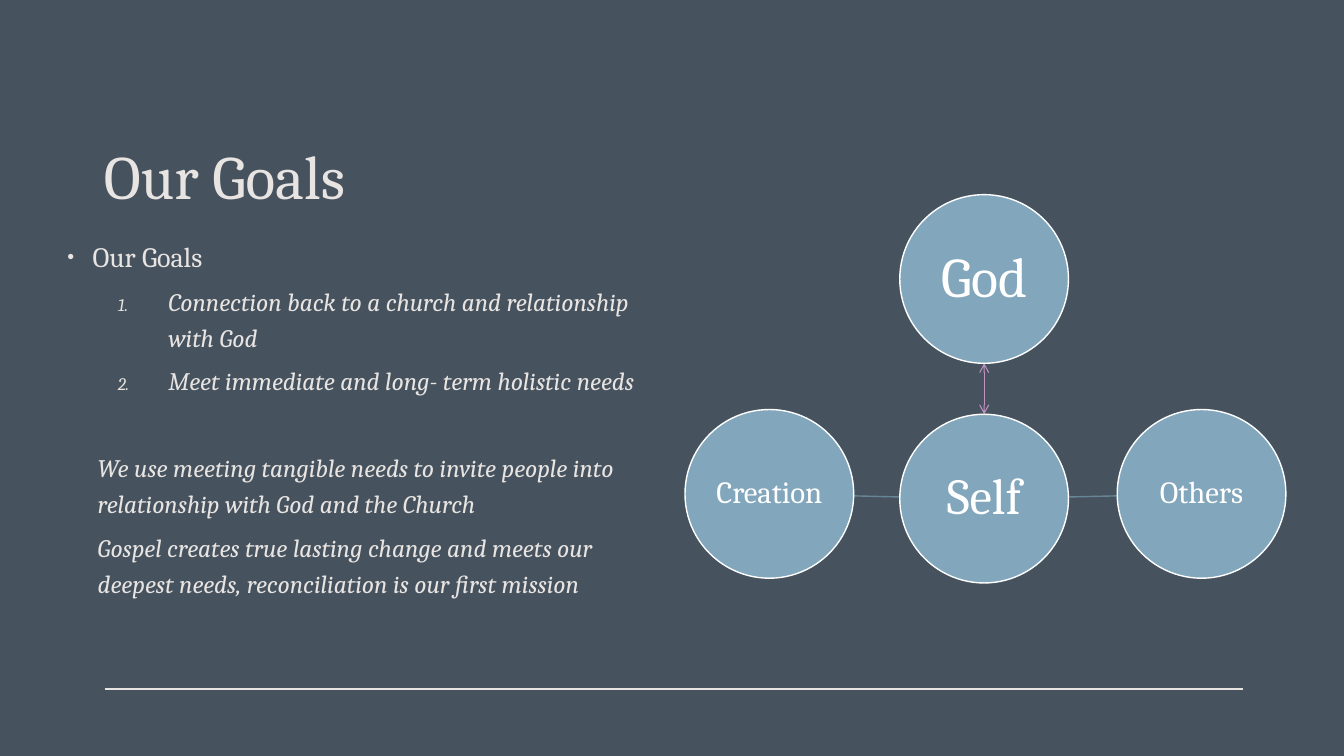
from dataclasses import dataclass

from lxml import etree
from pptx import Presentation
from pptx.dml.color import RGBColor
from pptx.enum.shapes import MSO_CONNECTOR, MSO_SHAPE
from pptx.enum.text import MSO_ANCHOR, MSO_AUTO_SIZE, PP_ALIGN
from pptx.oxml.ns import qn
from pptx.util import Pt

STRAIGHT = MSO_CONNECTOR.STRAIGHT
ELLIPSE = MSO_SHAPE.OVAL
LEFT, CENTER = PP_ALIGN.LEFT, PP_ALIGN.CENTER
TOP, MIDDLE, BOTTOM = MSO_ANCHOR.TOP, MSO_ANCHOR.MIDDLE, MSO_ANCHOR.BOTTOM
NO_AUTOFIT = MSO_AUTO_SIZE.NONE

FONT = "Cambria"
BACKGROUND, CREAM, WHITE = "46535F", "E8E4E2", "FFFFFF"
CIRCLE_BLUE, LINK_BLUE, ARROW_PINK = "82A6BB", "688596", "C492C3"
DIAMETER = 120.5


@dataclass
class Item:
    text: str
    size: float
    margin: float
    indent: float
    space_before: float
    level: int = 1
    bullet: str = "buNone"
    bullet_value: str = ""


@dataclass
class Circle:
    text: str
    left: float
    top: float
    size: float


@dataclass
class Link:
    start: tuple[float, float]
    end: tuple[float, float]
    color: str
    width: float
    arrows: bool = False


ITEMS = [
    Item("Our Goals", 20, 18, -18, 10, 0, "buChar", "•"),
    Item("Connection back to a church and relationship with God",
         18, 72, -36, 5, bullet="buAutoNum", bullet_value="arabicPeriod"),
    Item("Meet immediate and long- term holistic needs",
         18, 72, -36, 5, bullet="buAutoNum", bullet_value="arabicPeriod"),
    Item("We use meeting tangible needs to invite people into relationship "
         "with God and the Church", 18, 21.6, 0, 36),
    Item("Gospel creates true lasting change and meets our deepest needs, "
         "reconciliation is our first mission", 18, 21.6, 0, 5),
]
CIRCLES = [
    Circle("Self", 642.7, 295.9, 36),
    Circle("God", 642.7, 139, 40),
    Circle("Others", 798, 292.5, 22),
    Circle("Creation", 489.3, 292.5, 22),
]
LINKS = [
    Link((75, 492.2), (887.8, 492.2), CREAM, 0.85),
    Link((703, 295.9), (703, 259.5), ARROW_PINK, 0.75, True),
    Link((763.2, 355), (798, 354.2), LINK_BLUE, 1),
    Link((642.7, 355), (609.8, 354.2), LINK_BLUE, 1),
]


def rgb(color: str) -> RGBColor:
    return RGBColor.from_string(color)


def place(shape, left: float, top: float, width: float, height: float) -> None:
    shape.left, shape.top = Pt(left), Pt(top)
    shape.width, shape.height = Pt(width), Pt(height)


def set_font(paragraph, size: float, color: str, italic: bool = False) -> None:
    font = paragraph.font
    font.name, font.size, font.italic = FONT, Pt(size), italic
    font.color.rgb = rgb(color)


def set_bullet(paragraph, item: Item) -> None:
    """Set indents and bullet; call before the paragraph font is set."""
    properties = paragraph._p.get_or_add_pPr()
    properties.set("marL", str(Pt(item.margin)))
    properties.set("indent", str(Pt(item.indent)))
    if item.bullet != "buNone":
        etree.SubElement(properties, qn("a:buSzPct"), val="70000")
    bullet = etree.SubElement(properties, qn(f"a:{item.bullet}"))
    if item.bullet_value:
        name = "char" if item.bullet == "buChar" else "type"
        bullet.set(name, item.bullet_value)


def fill_title(title) -> None:
    place(title, 67, 69.1, 820.8, 85.7)
    frame = title.text_frame
    frame.text = "Our Goals"
    frame.auto_size, frame.vertical_anchor = NO_AUTOFIT, BOTTOM
    paragraph = frame.paragraphs[0]
    paragraph.alignment = LEFT
    set_font(paragraph, 44, CREAM)


def fill_body(body) -> None:
    place(body, 41, 162.7, 436.3, 307.4)
    frame = body.text_frame
    frame.text = "\n".join(item.text for item in ITEMS)
    frame.auto_size, frame.vertical_anchor = NO_AUTOFIT, TOP
    for paragraph, item in zip(frame.paragraphs, ITEMS):
        paragraph.level = item.level
        paragraph.line_spacing = 1.2
        paragraph.space_before = Pt(item.space_before)
        set_bullet(paragraph, item)
        set_font(paragraph, item.size, CREAM, italic=item.level > 0)


def add_circle(slide, circle: Circle) -> None:
    shape = slide.shapes.add_shape(ELLIPSE, Pt(circle.left), Pt(circle.top),
                                   Pt(DIAMETER), Pt(DIAMETER))
    shape.shadow.inherit = False
    shape.fill.solid()
    shape.fill.fore_color.rgb = rgb(CIRCLE_BLUE)
    shape.line.color.rgb = rgb(WHITE)
    shape.line.width = Pt(1)
    frame = shape.text_frame
    frame.text = circle.text
    frame.vertical_anchor = MIDDLE
    frame.margin_left = frame.margin_right = Pt(2)
    frame.margin_top = frame.margin_bottom = Pt(2)
    paragraph = frame.paragraphs[0]
    paragraph.alignment = CENTER
    paragraph.line_spacing = 0.9
    set_font(paragraph, circle.size, WHITE)


def add_link(slide, link: Link) -> None:
    connector = slide.shapes.add_connector(
        STRAIGHT, *(Pt(value) for value in link.start + link.end))
    connector.line.color.rgb = rgb(link.color)
    connector.line.width = Pt(link.width)
    etree.SubElement(connector._element.spPr, qn("a:effectLst"))
    if link.arrows:
        line = connector.line._get_or_add_ln()
        for end in ("a:headEnd", "a:tailEnd"):
            etree.SubElement(line, qn(end), type="arrow")


def main() -> None:
    presentation = Presentation()
    presentation.slide_width, presentation.slide_height = Pt(960), Pt(540)
    slide = presentation.slides.add_slide(presentation.slide_layouts[1])
    slide.background.fill.solid()
    slide.background.fill.fore_color.rgb = rgb(BACKGROUND)
    fill_title(slide.shapes.title)
    fill_body(slide.placeholders[1])
    for link in LINKS:
        add_link(slide, link)
    for circle in CIRCLES:
        add_circle(slide, circle)
    presentation.save("out.pptx")


if __name__ == "__main__":
    main()
